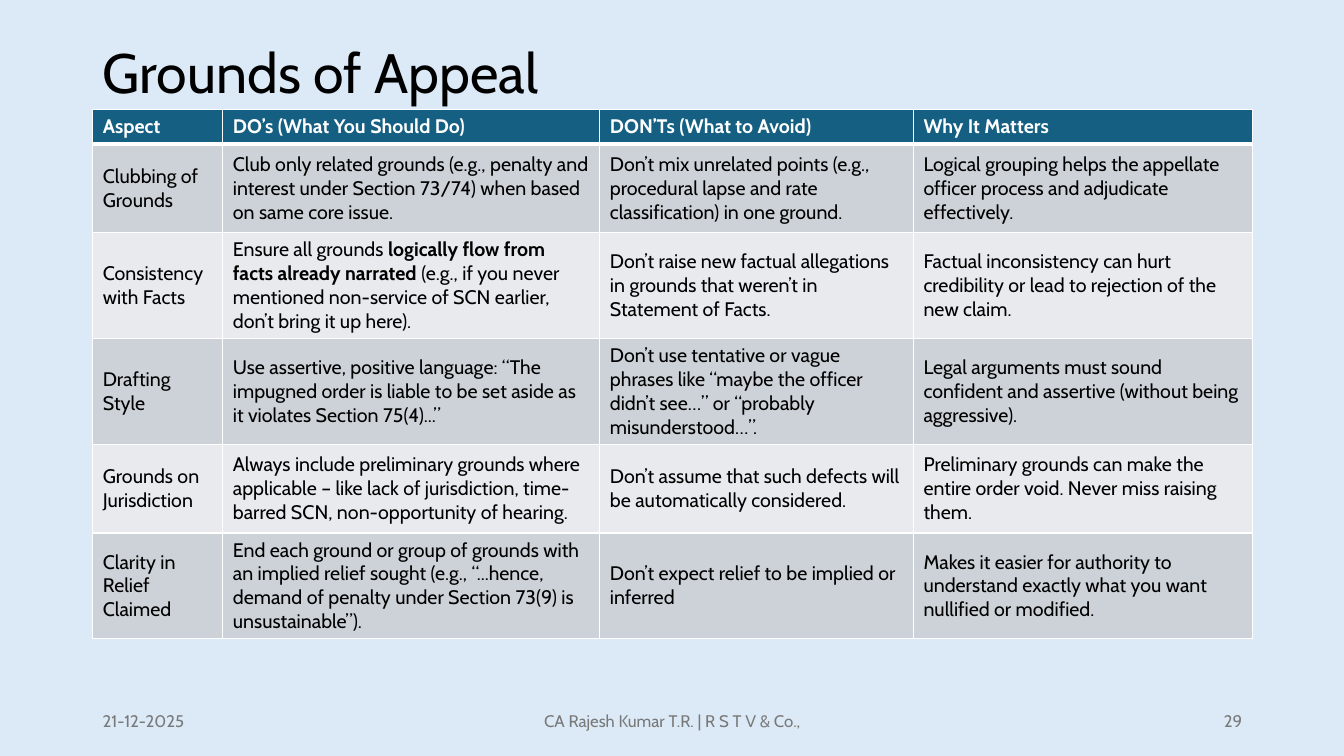
from lxml import etree
from pptx import Presentation
from pptx.dml.color import RGBColor
from pptx.enum import text
from pptx.oxml import ns
from pptx.util import Emu, Pt

PX = 9144  # 100 px to the inch
MIDDLE = text.MSO_ANCHOR.MIDDLE
LEFT, CENTER, RIGHT = text.PP_ALIGN.LEFT, text.PP_ALIGN.CENTER, text.PP_ALIGN.RIGHT

EDGE, CONTENT_WIDTH = 92, 1150
COLUMN_WIDTHS = [129, 374, 311, 336]
ROW_HEIGHTS = [33, 88, 105, 105, 88, 105]
HEADER_FILL, BAND_FILLS = "156082", ["CCD2D8", "E8EAED"]

# Text between double asterisks is bold.
GROUNDS = [
    ["Aspect", "DO’s (What You Should Do)", "DON’Ts (What to Avoid)", "Why It Matters"],
    ["Clubbing of Grounds",
     "Club only related grounds (e.g., penalty and interest under Section 73/74) "
     "when based on same core issue.",
     "Don’t mix unrelated points (e.g., procedural lapse and rate classification) "
     "in one ground.",
     "Logical grouping helps the appellate officer process and adjudicate effectively."],
    ["Consistency with Facts",
     "Ensure all grounds **logically flow from facts already narrated** (e.g., if you "
     "never mentioned non-service of SCN earlier, don’t bring it up here).",
     "Don’t raise new factual allegations in grounds that weren’t in Statement of Facts.",
     "Factual inconsistency can hurt credibility or lead to rejection of the new claim."],
    ["Drafting Style",
     "Use assertive, positive language: “The impugned order is liable to be set aside "
     "as it violates Section 75(4)...”",
     "Don’t use tentative or vague phrases like “maybe the officer didn’t see…” "
     "or “probably misunderstood…”.",
     "Legal arguments must sound confident and assertive (without being aggressive)."],
    ["Grounds on Jurisdiction",
     "Always include preliminary grounds where applicable – like lack of jurisdiction, "
     "time-barred SCN, non-opportunity of hearing.",
     "Don’t assume that such defects will be automatically considered.",
     "Preliminary grounds can make the entire order void. Never miss raising them."],
    ["Clarity in Relief Claimed",
     "End each ground or group of grounds with an implied relief sought (e.g., “...hence, "
     "demand of penalty under Section 73(9) is unsustainable”).",
     "Don’t expect relief to be implied or inferred",
     "Makes it easier for authority to understand exactly what you want nullified "
     "or modified."],
]


def color(value):
    return RGBColor.from_string(value)


def px(*lengths):
    return [Emu(length * PX) for length in lengths]


class SlideBuilder:
    font = "Cabin"

    def __init__(self, deck, background):
        self.page = deck.slides.add_slide(deck.slide_layouts[5])
        self.page.background.fill.solid()
        self.page.background.fill.fore_color.rgb = color(background)

    def set_words(self, frame, words, size, ink, align=LEFT, bold=False):
        """Fill a frame with one paragraph, switching bold at each double asterisk."""
        frame.word_wrap = True
        frame.vertical_anchor = MIDDLE
        para = frame.paragraphs[0]
        para.alignment = align
        for index, part in enumerate(words.split("**")):
            span = para.add_run()
            span.text = part
            span.font.name = self.font
            span.font.size = Pt(size)
            span.font.bold = bold or index % 2 == 1
            span.font.color.rgb = color(ink)
        return para

    def title(self, words, *bounds):
        box = self.page.shapes.title
        box.left, box.top, box.width, box.height = px(*bounds)
        box.text_frame.auto_size = text.MSO_AUTO_SIZE.NONE
        self.set_words(box.text_frame, words, 39.6, "000000").line_spacing = 0.9

    def footer(self, words, left, width, align):
        box = self.page.shapes.add_textbox(*px(left, 695, width, 40))
        self.set_words(box.text_frame, words, 12, "797979", align)

    def borders(self, cell, top, bottom):
        """Draw white cell edges; top and bottom are widths in points."""
        edges = {"L": 1, "R": 1, "T": top, "B": bottom}
        properties = cell._tc.get_or_add_tcPr()
        for index, (side, width) in enumerate(edges.items()):
            line = etree.Element(ns.qn(f"a:ln{side}"), w=str(Pt(width)))
            fill = etree.SubElement(line, ns.qn("a:solidFill"))
            etree.SubElement(fill, ns.qn("a:srgbClr"), val="FFFFFF")
            properties.insert(index, line)

    def table(self, rows, left, top):
        bounds = px(left, top, sum(COLUMN_WIDTHS), sum(ROW_HEIGHTS))
        grid = self.page.shapes.add_table(len(rows), len(COLUMN_WIDTHS), *bounds).table
        for column, width in zip(grid.columns, px(*COLUMN_WIDTHS)):
            column.width = width
        for row, height in zip(grid.rows, px(*ROW_HEIGHTS)):
            row.height = height
        for r, row in enumerate(rows):
            header = r == 0
            for c, words in enumerate(row):
                cell = grid.cell(r, c)
                cell.vertical_anchor = MIDDLE
                cell.fill.solid()
                cell.fill.fore_color.rgb = color(
                    HEADER_FILL if header else BAND_FILLS[(r - 1) % 2])
                self.borders(cell, 3 if r == 1 else 1, 3 if header else 1)
                self.set_words(cell.text_frame, words, 14,
                               "FFFFFF" if header else "000000", bold=header)


def main():
    deck = Presentation()
    deck.slide_width, deck.slide_height = px(1333, 750)
    slide = SlideBuilder(deck, "DCEAF7")
    slide.title("Grounds of Appeal", EDGE, 40, CONTENT_WIDTH, 69)
    slide.table(GROUNDS, EDGE, 109)
    slide.footer("21-12-2025", EDGE, 300, LEFT)
    slide.footer("CA Rajesh Kumar T.R. | R S T V & Co.,", 442, 450, CENTER)
    slide.footer("29", 942, 300, RIGHT)
    deck.save("out.pptx")


if __name__ == "__main__":
    main()
